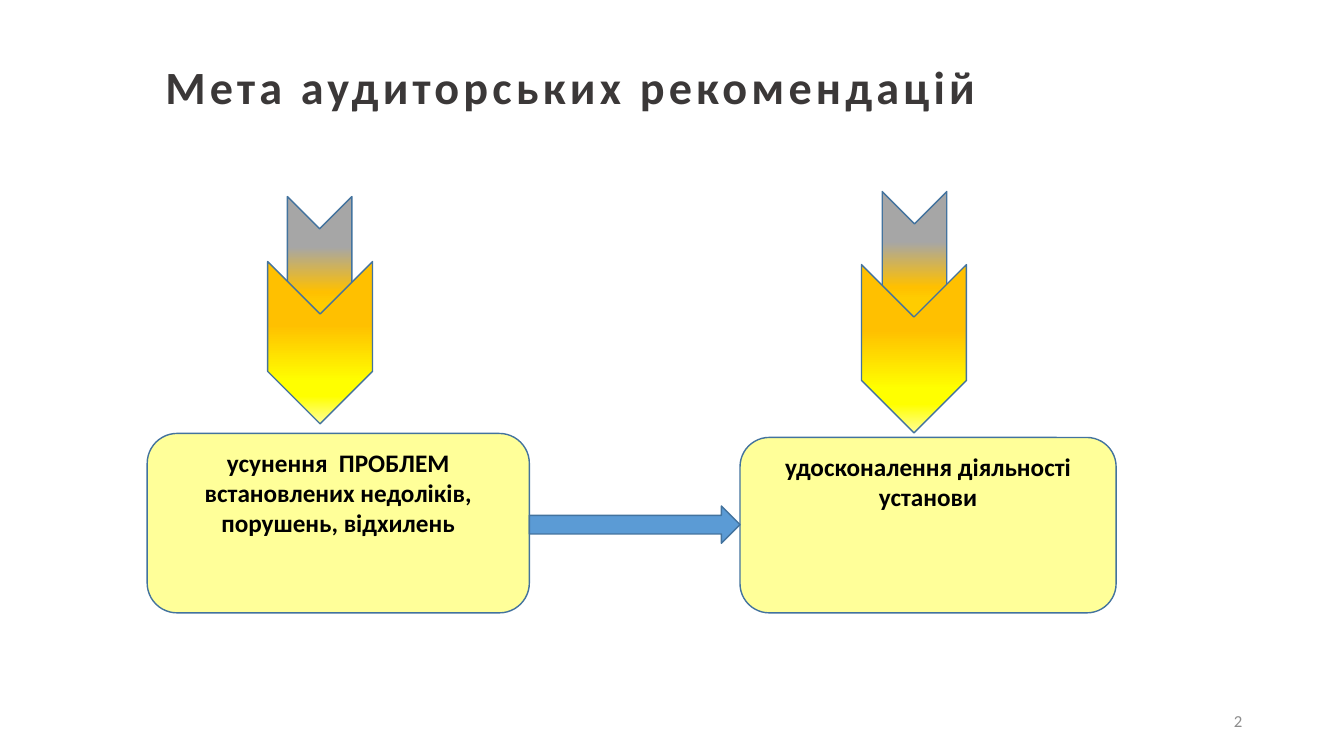
from lxml import etree
from pptx import Presentation
from pptx.dml.color import RGBColor
from pptx.enum.shapes import MSO_SHAPE
from pptx.enum.text import MSO_ANCHOR, PP_ALIGN
from pptx.oxml.ns import qn
from pptx.util import Inches, Pt

CHEVRON = MSO_SHAPE.CHEVRON
ROUNDED = MSO_SHAPE.ROUNDED_RECTANGLE
RIGHT_ARROW = MSO_SHAPE.RIGHT_ARROW
TOP, MIDDLE = MSO_ANCHOR.TOP, MSO_ANCHOR.MIDDLE
LEFT, CENTER, RIGHT = PP_ALIGN.LEFT, PP_ALIGN.CENTER, PP_ALIGN.RIGHT

FONT = "Calibri"
OUTLINE = "43739E"
GREY_TO_GOLD = [(39, "A6A6A6"), (74, "FFC000"), (83, "FFCC00"), (100, "FFCC00")]
GOLD_TO_YELLOW = [(39, "FFC000"), (74, "FFFF00"), (83, "FFFF00"), (100, "FFFF99")]


def color(value):
    return RGBColor.from_string(value)


def write(s, text, size, font_color, bold=False, align=LEFT, anchor=TOP):
    tf = s.text_frame
    tf.word_wrap = True
    tf.vertical_anchor = anchor
    tf.text = text
    p = tf.paragraphs[0]
    p.alignment = align
    r = p.runs[0]
    r.font.name = FONT
    r.font.size = Pt(size)
    r.font.bold = bold
    r.font.color.rgb = color(font_color)
    return p


def add_text(slide, box, text, size, font_color, **style):
    s = slide.shapes.add_textbox(*map(Inches, box))
    return s, write(s, text, size, font_color, **style)


def add_outlined(slide, kind, box, fill=None):
    s = slide.shapes.add_shape(kind, *map(Inches, box))
    s.shadow.inherit = False
    s.line.color.rgb = color(OUTLINE)
    s.line.width = Pt(1)
    if fill:
        s.fill.solid()
        s.fill.fore_color.rgb = color(fill)
    return s


def add_chevron(slide, box, stops):
    s = add_outlined(slide, CHEVRON, box)
    s.rotation = 90
    s.fill.gradient()
    s.fill.gradient_angle = 0
    # Replace the default stops with the given ones
    stop_list = s.element.spPr.find(qn("a:gradFill")).find(qn("a:gsLst"))
    for old in list(stop_list):
        stop_list.remove(old)
    for percent, value in stops:
        stop = etree.SubElement(stop_list, qn("a:gs"), pos=str(percent * 1000))
        etree.SubElement(stop, qn("a:srgbClr"), val=value)


def add_goal(slide, box, text):
    s = add_outlined(slide, ROUNDED, box, "FFFF99")
    write(s, text, 18, "000000", bold=True, align=CENTER)


def main():
    prs = Presentation()
    prs.slide_width, prs.slide_height = Inches(13.33), Inches(7.5)
    slide = prs.slides.add_slide(prs.slide_layouts[6])

    # Title with wide letter spacing
    s, p = add_text(slide, (1.25, 0.4, 11.81, 0.97), "Мета аудиторських рекомендацій",
                    33, "3B3838", bold=True, anchor=MIDDLE)
    s.text_frame.margin_left = Inches(0.39)
    p.line_spacing = 0.9
    p.runs[0].font._element.set("spc", "300")

    # Downward chevrons
    for small, large in [((2.53, 2.27, 1.28, 0.64), (2.37, 2.88, 1.61, 1.04)),
                         ((8.43, 2.22, 1.28, 0.64), (8.23, 2.94, 1.67, 1.04))]:
        add_chevron(slide, small, GREY_TO_GOLD)
        add_chevron(slide, large, GOLD_TO_YELLOW)

    # Goals and the arrow between them
    add_goal(slide, (1.46, 4.3, 3.79, 1.78),
             "усунення  ПРОБЛЕМ встановлених недоліків, порушень, відхилень")
    add_goal(slide, (7.34, 4.34, 3.73, 1.74), "удосконалення діяльності установи")
    add_outlined(slide, RIGHT_ARROW, (5.25, 5.02, 2.09, 0.37), "5B9BD5")

    # Slide number
    add_text(slide, (9.42, 6.95, 3, 0.4), "2", 12, "8C8C8C", align=RIGHT, anchor=MIDDLE)

    prs.save("out.pptx")


if __name__ == "__main__":
    main()
